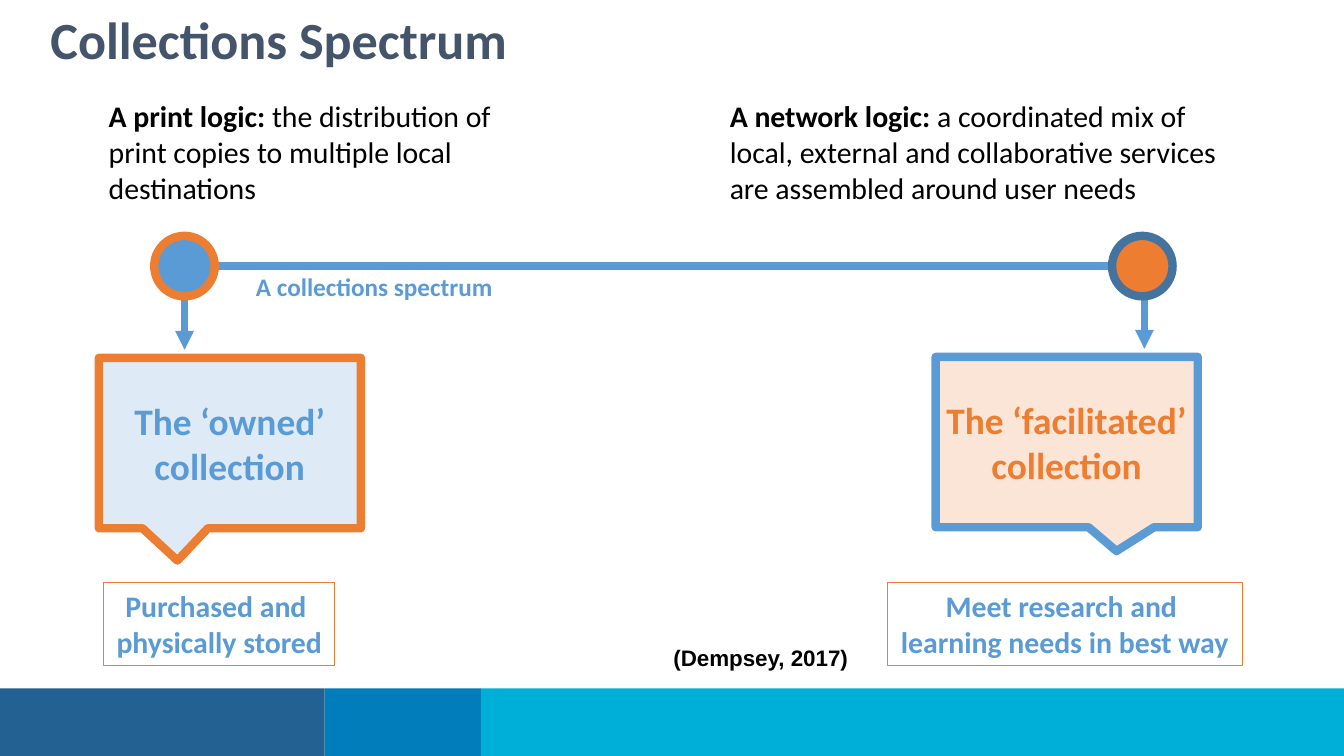
from dataclasses import dataclass
from typing import Optional

from lxml.etree import SubElement
from pptx import Presentation
from pptx.dml.color import RGBColor
from pptx.enum.shapes import MSO_CONNECTOR as Connector, MSO_SHAPE as Preset
from pptx.enum.text import MSO_ANCHOR as Anchor, PP_ALIGN as Align
from pptx.oxml.ns import qn
from pptx.util import Inches, Pt


@dataclass(frozen=True)
class Theme:
    black: str = "000000"
    slate: str = "44546A"
    blue: str = "5B9BD5"
    dark_blue: str = "43739E"
    pale_blue: str = "DEEBF7"
    orange: str = "ED7D31"
    pale_orange: str = "FBE5D6"
    footer: tuple = ("236192", "007DBA", "00AFD7")
    font: str = "Calibri"
    citation_font: str = "Arial"
    title_size: float = 37.3
    callout_size: float = 26.7
    body_size: float = 21.3
    caption_size: float = 18
    citation_size: float = 16


THEME = Theme()


@dataclass(frozen=True)
class Box:
    left: float
    top: float
    width: float
    height: float

    def lengths(self) -> list:
        return [Inches(v) for v in (self.left, self.top, self.width, self.height)]


@dataclass(frozen=True)
class SpectrumEnd:
    """Everything that stands at one end of the spectrum."""
    logic: str
    description: str
    logic_box: Box
    node_left: float
    node_fill: str
    node_line: str
    arrow_x: float
    arrow_top: float
    arrow_bottom: float
    collection: str
    callout_box: Box
    callout_tip: tuple
    callout_fill: str
    callout_line: str
    callout_color: str
    outcome: str
    outcome_box: Box


NODE_TOP, NODE_SIZE = 2.34, 0.6
AXIS_Y = NODE_TOP + NODE_SIZE / 2

ENDS = (
    SpectrumEnd(
        "A print logic: ",
        "the distribution of print copies to multiple local \ndestinations",
        Box(0.98, 0.92, 4.16, 1.18),
        1.53, THEME.blue, THEME.orange, 1.83, 2.92, 3.47,
        "The ‘owned’ collection", Box(0.98, 3.55, 2.6, 1.69), (-0.2, 0.69),
        THEME.pale_blue, THEME.orange, THEME.blue,
        "Purchased and \nphysically stored", Box(1.03, 5.78, 2.29, 0.82)),
    SpectrumEnd(
        "A network logic: ",
        "a coordinated mix of local, external and collaborative services "
        "are assembled around user needs",
        Box(7.14, 0.92, 5.17, 1.18),
        11.03, THEME.orange, THEME.dark_blue, 11.35, 2.87, 3.46,
        "The ‘facilitated’ collection", Box(9.28, 3.54, 2.6, 1.69), (0.19, 0.64),
        THEME.pale_orange, THEME.blue, THEME.orange,
        "Meet research and \nlearning needs in best way", Box(8.8, 5.78, 3.52, 0.82)),
)


def write(shape, text: str, *, size: float, color: str, lead: str = "",
          bold: bool = True, font: str = THEME.font, align=Align.LEFT,
          anchor=Anchor.TOP, wrap: bool = True) -> None:
    """Fill a shape with one paragraph: a bold lead, then text with line breaks."""
    frame = shape.text_frame
    frame.word_wrap = wrap
    frame.vertical_anchor = anchor
    paragraph = frame.paragraphs[0]
    paragraph.alignment = align

    def add_run(words: str, is_bold: bool) -> None:
        run = paragraph.add_run()
        run.text = words
        run.font.name, run.font.size, run.font.bold = font, Pt(size), is_bold
        run.font.color.rgb = RGBColor.from_string(color)

    if lead:
        add_run(lead, True)
    for number, line in enumerate(text.split("\n")):
        if number:
            paragraph.add_line_break()
        add_run(line, bold)


def add_box(slide, preset, box: Box, fill: Optional[str] = None,
            line: Optional[str] = None, weight: float = 6):
    shape = slide.shapes.add_shape(preset, *box.lengths())
    shape.shadow.inherit = False
    if fill:
        shape.fill.solid()
        shape.fill.fore_color.rgb = RGBColor.from_string(fill)
    else:
        shape.fill.background()
    if line:
        shape.line.color.rgb = RGBColor.from_string(line)
        shape.line.width = Pt(weight)
    else:
        shape.line.fill.background()
    return shape


def add_line(slide, start: tuple, end: tuple, weight: float, arrow: bool = False) -> None:
    points = [Inches(v) for v in (*start, *end)]
    connector = slide.shapes.add_connector(Connector.STRAIGHT, *points)
    connector.line.color.rgb = RGBColor.from_string(THEME.blue)
    connector.line.width = Pt(weight)
    if arrow:
        SubElement(connector.line._get_or_add_ln(), qn("a:tailEnd"), type="triangle")
    SubElement(connector._element.spPr, qn("a:effectLst"))


def add_title(slide) -> None:
    title = slide.shapes.title
    title.left, title.top, title.width, title.height = Box(0, 0.03, 12.31, 0.89).lengths()
    write(title, "Collections Spectrum", size=THEME.title_size, color=THEME.slate)
    title.text_frame.margin_left = Inches(0.5)
    title.text_frame.margin_top = Inches(0.11)
    title.text_frame.paragraphs[0].line_spacing = 0.9


def add_footer(slide) -> None:
    left = 0
    for width, color in zip((3.22, 1.55, 8.56), THEME.footer):
        add_box(slide, Preset.RECTANGLE, Box(left, 6.83, width, 0.67), color)
        left += width


def add_end(slide, end: SpectrumEnd) -> None:
    add_line(slide, (end.arrow_x, end.arrow_top), (end.arrow_x, end.arrow_bottom),
             4.5, arrow=True)
    add_box(slide, Preset.OVAL, Box(end.node_left, NODE_TOP, NODE_SIZE, NODE_SIZE),
            end.node_fill, end.node_line)

    callout = add_box(slide, Preset.RECTANGULAR_CALLOUT, end.callout_box,
                      end.callout_fill, end.callout_line)
    callout.adjustments[0], callout.adjustments[1] = end.callout_tip
    write(callout, end.collection, size=THEME.callout_size, color=end.callout_color,
          align=Align.CENTER, anchor=Anchor.MIDDLE)

    outcome = add_box(slide, Preset.RECTANGLE, end.outcome_box,
                      line=THEME.orange, weight=0.75)
    write(outcome, end.outcome, size=THEME.body_size, color=THEME.blue,
          align=Align.CENTER, wrap=False)

    logic = slide.shapes.add_textbox(*end.logic_box.lengths())
    write(logic, end.description, lead=end.logic, bold=False,
          size=THEME.body_size, color=THEME.black)


def main() -> None:
    deck = Presentation()
    deck.slide_width, deck.slide_height = Inches(13.33), Inches(7.5)
    slide = deck.slides.add_slide(deck.slide_layouts[5])
    add_title(slide)
    add_footer(slide)

    citation = slide.shapes.add_textbox(*Box(6.58, 6.34, 2.61, 0.37).lengths())
    write(citation, "(Dempsey, 2017)", size=THEME.citation_size,
          color=THEME.black, font=THEME.citation_font)

    first, last = ENDS
    add_line(slide, (first.node_left + NODE_SIZE, AXIS_Y), (last.node_left, AXIS_Y), 6)
    for end in ENDS:
        add_end(slide, end)

    caption = slide.shapes.add_textbox(*Box(2.44, 2.64, 3.4, 0.4).lengths())
    write(caption, "A collections spectrum", size=THEME.caption_size, color=THEME.blue)
    deck.save("out.pptx")


if __name__ == "__main__":
    main()
